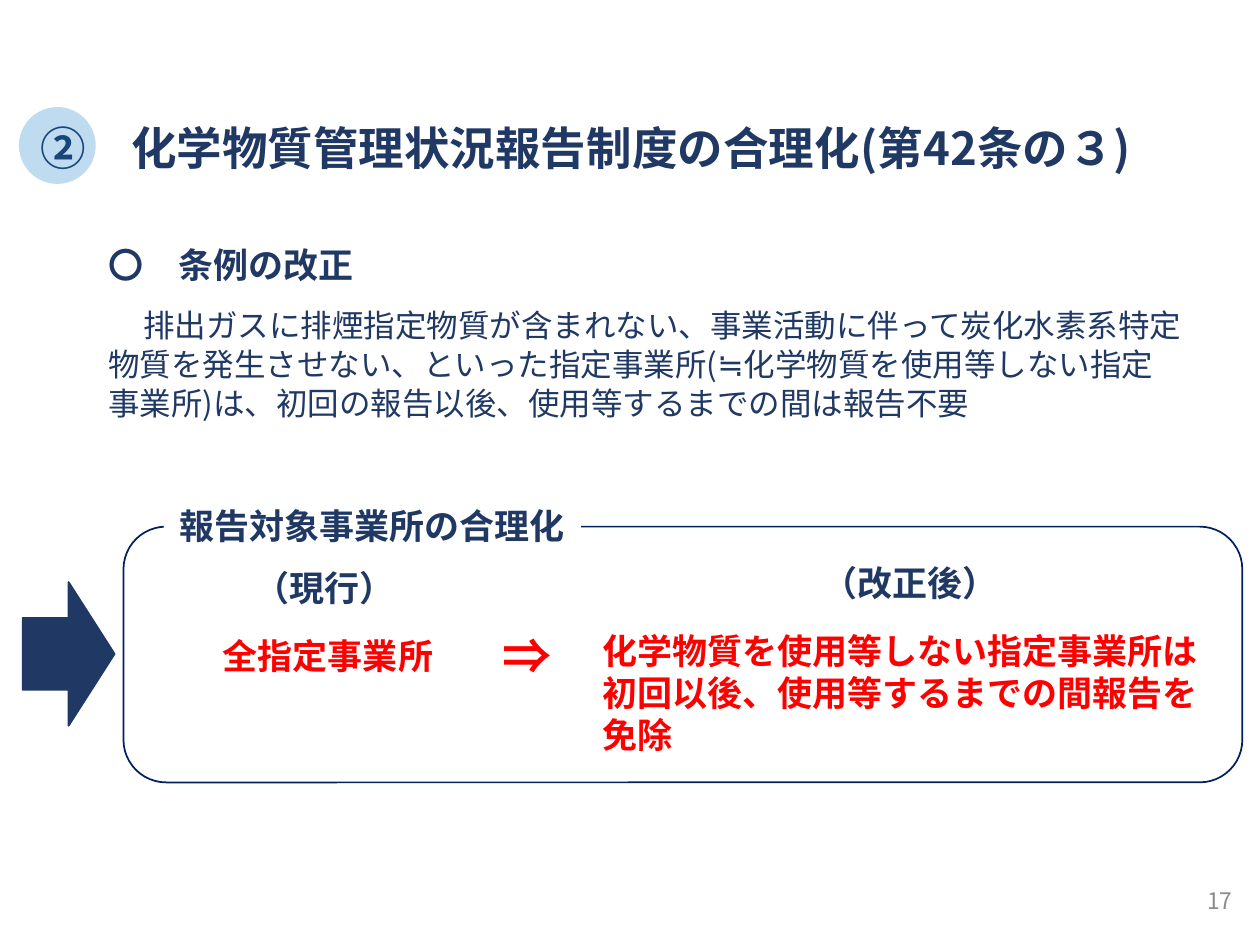
from lxml.etree import SubElement
from pptx import Presentation
from pptx.dml.color import RGBColor
from pptx.enum.shapes import MSO_SHAPE as Shape
from pptx.enum.text import MSO_ANCHOR as Anchor, PP_ALIGN as Align
from pptx.oxml.ns import qn
from pptx.util import Inches, Pt

NAVY = RGBColor(0x20, 0x38, 0x64)
FRAME = RGBColor(0x00, 0x20, 0x60)
BLUE = RGBColor(0x00, 0x70, 0xC0)
RED = RGBColor(0xFF, 0x00, 0x00)
GRAY = RGBColor(0x8C, 0x8C, 0x8C)
WHITE = RGBColor(0xFF, 0xFF, 0xFF)
FONT = "Noto Sans CJK JP"


def add_run(para, text, size, color=NAVY, bold=True):
    """Append a run with the deck's font for Latin and Japanese text."""
    span = para.add_run()
    span.text = text
    font = span.font
    font.name, font.size, font.bold = FONT, Pt(size), bold
    font.color.rgb = color
    SubElement(font._element, qn("a:ea"), typeface=FONT)


def prepare_frame(shape, anchor=Anchor.MIDDLE, align=Align.LEFT):
    """Set wrapping and alignment, and return the first paragraph."""
    frame = shape.text_frame
    frame.word_wrap = True
    frame.vertical_anchor = anchor
    para = frame.paragraphs[0]
    para.alignment = align
    return para


def add_text(page, box, anchor=Anchor.MIDDLE, align=Align.LEFT):
    """Add a text box and return its first paragraph."""
    shape = page.shapes.add_textbox(*map(Inches, box))
    return prepare_frame(shape, anchor, align)


def add_shape(page, kind, box, fill=None, line=None):
    """Add a flat preset shape with optional fill and outline."""
    shape = page.shapes.add_shape(kind, *map(Inches, box))
    shape.shadow.inherit = False
    if fill is None:
        shape.fill.background()
    else:
        shape.fill.solid()
        shape.fill.fore_color.rgb = fill
    if line is None:
        shape.line.fill.background()
    else:
        shape.line.color.rgb = line
        shape.line.width = Pt(1)
    return shape


def add_heading(page, box):
    """Format the title and lay a translucent disc over its number."""
    left, top, width, height = box
    title = page.shapes.title
    title.left, title.top, title.width, title.height = map(Inches, box)
    add_run(prepare_frame(title), "②　化学物質管理状況報告制度の合理化(第42条の３)", 26)
    disc = add_shape(page, Shape.OVAL, (left - 0.07, top - 0.05, 0.61, 0.61), BLUE)
    color = disc.fill._xPr.find(qn("a:solidFill"))[0]
    SubElement(color, qn("a:alpha"), val="25000")


def add_revision(page, box):
    """Write the heading and explanation of the ordinance revision."""
    head = add_text(page, box, Anchor.TOP)
    head.line_spacing = Pt(24)
    add_run(head, "〇　条例の改正", 20)
    body = head._parent.add_paragraph()
    body.line_spacing = Pt(22)
    body.space_before = Pt(12)
    add_run(body, "　", 20, bold=False)
    add_run(body, "排出ガスに排煙指定物質が含まれない、事業活動に伴って炭化水素系特定"
            "物質を発生させない、といった指定事業所(≒化学物質を使用等しない指定"
            "事業所)は、初回の報告以後、使用等するまでの間は報告不要", 18, bold=False)


def add_state(page, box, label, indent, rule):
    """Write an indented label above the rule that applies."""
    head = add_text(page, box)
    head._p.get_or_add_pPr().set("marL", str(Inches(indent)))
    add_run(head, label, 20)
    body = head._parent.add_paragraph()
    body.space_before = Pt(15)
    add_run(body, rule, 20, RED)
    for para in (head, body):
        para.line_spacing = Pt(24)


def add_comparison(page, box):
    """Frame the current and revised rules, with the arrow leading in."""
    left, top, width, height = box
    add_shape(page, Shape.RIGHT_ARROW, (left - 0.8, top + 0.44, 0.73, 1.14), NAVY, NAVY)
    add_shape(page, Shape.ROUNDED_RECTANGLE, box, line=FRAME)
    label = add_shape(page, Shape.RECTANGLE, (left + 0.32, top - 0.23, 3.31, 0.44), WHITE)
    add_run(prepare_frame(label, align=Align.CENTER), "報告対象事業所の合理化", 20)
    add_state(page, (left + 0.69, top + 0.26, 2.2, 0.98), "（現行）", 0.25, "全指定事業所")
    add_state(page, (left + 3.7, top + 0.22, 5.18, 1.65), "（改正後）", 1.75,
              "化学物質を使用等しない指定事業所は初回以後、使用等するまでの間報告を免除")
    change = add_text(page, (left + 2.86, top + 0.73, 0.69, 0.57), align=Align.CENTER)
    add_run(change, "⇒", 28, RED)


def add_page_number(page, box):
    """Write the page number at the lower right."""
    add_run(add_text(page, box, align=Align.RIGHT), "17", 13, GRAY, False)


def main():
    """Build and save the slide."""
    deck = Presentation()
    deck.slide_width, deck.slide_height = Inches(10), Inches(7.5)
    page = deck.slides.add_slide(deck.slide_layouts[5])
    add_heading(page, (0.22, 0.9, 9.65, 0.54))
    add_revision(page, (0.76, 1.88, 8.72, 1.55))
    add_comparison(page, (0.98, 4.18, 8.88, 2.03))
    add_page_number(page, (7.63, 6.95, 2.25, 0.4))
    deck.save("out.pptx")


if __name__ == "__main__":
    main()
